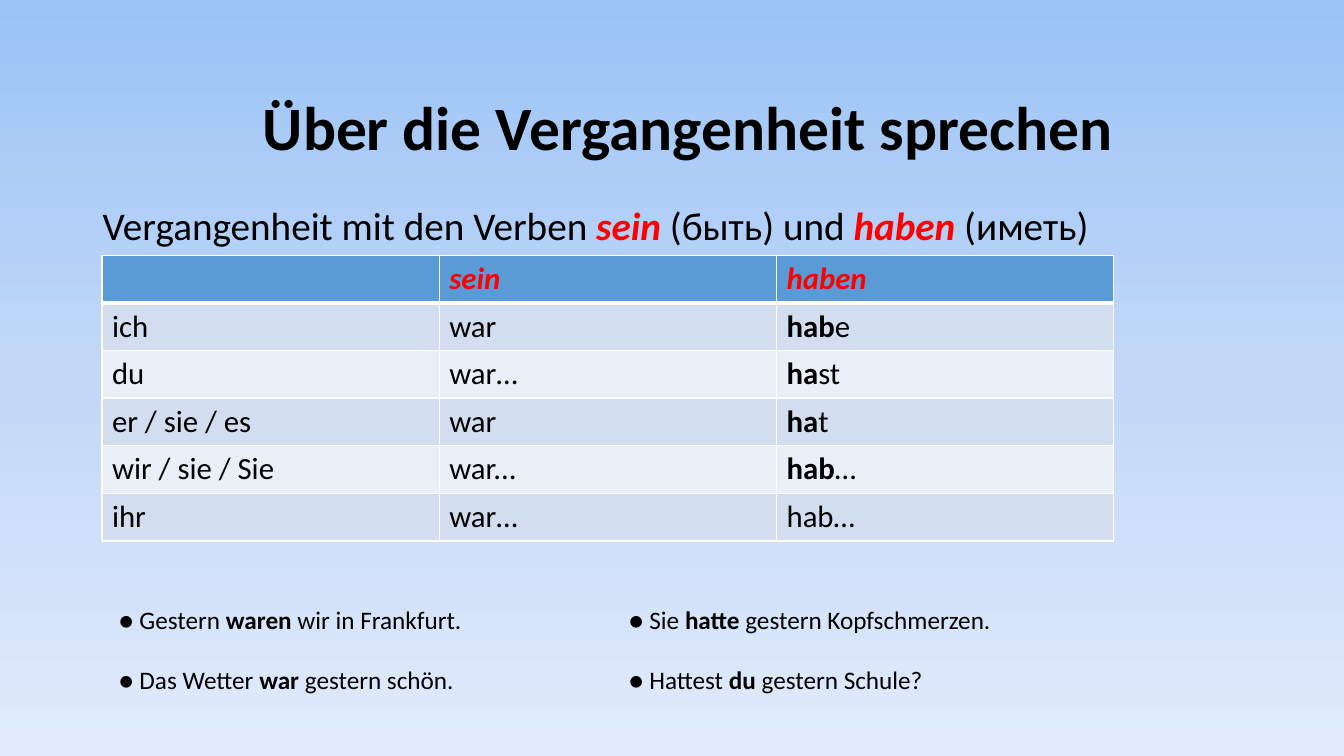
import copy

import pptx
import pptx.dml.color
import pptx.enum.text
import pptx.oxml
import pptx.oxml.ns
import pptx.util
from pptx.util import Cm

FONT = "Calibri"
BLACK, RED, WHITE = "000000", "FF0000", "FFFFFF"
HEADER_FILL, BAND_FILLS = "5B9BD5", ("D2DEEF", "EAEFF7")
SKY = ((0, "9AC3F5"), (0.5, "C2D8F8"), (1, "E1EBFB"))

# Asterisks enclose the emphasised parts
TITLE = "*Über die Vergangenheit sprechen*"
INTRO = "Vergangenheit mit den Verben *sein *(быть) und *haben *(иметь)"
VERBS = (
    ("", "*sein*", "*haben*"),
    ("ich", "war", "*hab*e"),
    ("du", "war…", "*ha*st"),
    ("er / sie / es", "war", "*ha*t"),
    ("wir / sie / Sie", "war...", "*hab*…"),
    ("ihr", "war…", "hab…"),
)
EXAMPLES = (
    "● Gestern *waren* wir in Frankfurt.\t● Sie *hatte* gestern Kopfschmerzen.",
    "● Das Wetter *war* gestern schön.\t● Hattest *du* gestern Schule?",
)


def color(value):
    return pptx.dml.color.RGBColor.from_string(value)


def write(para, marked, size, red_emphasis=False):
    """Fill a paragraph, with the parts between asterisks emphasised."""
    for index, part in enumerate(marked.split("*")):
        if not part:
            continue
        strong = index % 2 == 1
        span = para.add_run()
        span.text = part
        span.font.name = FONT
        span.font.size = pptx.util.Pt(size)
        span.font.bold = strong
        span.font.italic = strong and red_emphasis
        span.font.color.rgb = color(RED if strong and red_emphasis else BLACK)


def add_text(page, left, top, width, height, lines, size, spacing, red_emphasis=False):
    box = page.shapes.add_textbox(Cm(left), Cm(top), Cm(width), Cm(height))
    frame = box.text_frame
    frame.word_wrap = True
    for index, line in enumerate(lines):
        para = frame.add_paragraph() if index else frame.paragraphs[0]
        para.line_spacing = spacing
        write(para, line, size, red_emphasis)
    return frame


def add_tab_stop(para, position):
    properties = para._p.get_or_add_pPr()
    stops = pptx.oxml.parse_xml(
        f'<a:tabLst {pptx.oxml.ns.nsdecls("a")}>'
        f'<a:tab pos="{Cm(position)}" algn="l"/></a:tabLst>'
    )
    properties.append(stops)


def paint_background(page):
    fill = page.background.fill
    fill.gradient()
    fill.gradient_angle = 270
    first = fill.gradient_stops[0]._gs
    first.addnext(copy.deepcopy(first))
    for stop, (position, value) in zip(fill.gradient_stops, SKY):
        stop.position = position
        stop.color.rgb = color(value)


def style_cell(cell, fill, top, bottom):
    properties = cell._tc.get_or_add_tcPr()
    for side, width in (("L", 1), ("R", 1), ("T", top), ("B", bottom)):
        properties.append(pptx.oxml.parse_xml(
            f'<a:ln{side} {pptx.oxml.ns.nsdecls("a")} w="{pptx.util.Pt(width)}">'
            f'<a:solidFill><a:srgbClr val="{WHITE}"/></a:solidFill></a:ln{side}>'
        ))
    cell.fill.solid()
    cell.fill.fore_color.rgb = color(fill)


def add_verb_table(page, left, top, column_width, row_height):
    rows, columns = len(VERBS), len(VERBS[0])
    table = page.shapes.add_table(
        rows, columns, Cm(left), Cm(top),
        Cm(column_width * columns), Cm(row_height * rows),
    ).table
    for column in table.columns:
        column.width = Cm(column_width)
    for r, forms in enumerate(VERBS):
        table.rows[r].height = Cm(row_height)
        fill = BAND_FILLS[(r - 1) % 2] if r else HEADER_FILL
        for c, form in enumerate(forms):
            cell = table.cell(r, c)
            style_cell(cell, fill, 3 if r == 1 else 1, 3 if r == 0 else 1)
            write(cell.text_frame.paragraphs[0], form, 22, red_emphasis=r == 0)


def main():
    deck = pptx.Presentation()
    deck.slide_width, deck.slide_height = Cm(33.87), Cm(19.05)
    page = deck.slides.add_slide(deck.slide_layouts[6])
    paint_background(page)

    # Introduction and verb forms
    intro = add_text(page, 2.34, 5.08, 29.21, 9.45, [INTRO], 28, 0.9, red_emphasis=True)
    intro.paragraphs[0].space_before = pptx.util.Pt(10)
    add_verb_table(page, 2.57, 6.43, 8.5, 1.2)

    # Title
    title = add_text(page, 2.74, 1.45, 29.21, 3.68, [TITLE], 44, 0.9)
    title.vertical_anchor = pptx.enum.text.MSO_ANCHOR.MIDDLE
    title.paragraphs[0].alignment = pptx.enum.text.PP_ALIGN.CENTER

    # Example sentences in two columns
    examples = add_text(page, 2.74, 14.33, 24.28, 3.12, EXAMPLES, 18, 2.0)
    for para in examples.paragraphs:
        add_tab_stop(para, 12.85)

    deck.save("out.pptx")


if __name__ == "__main__":
    main()
